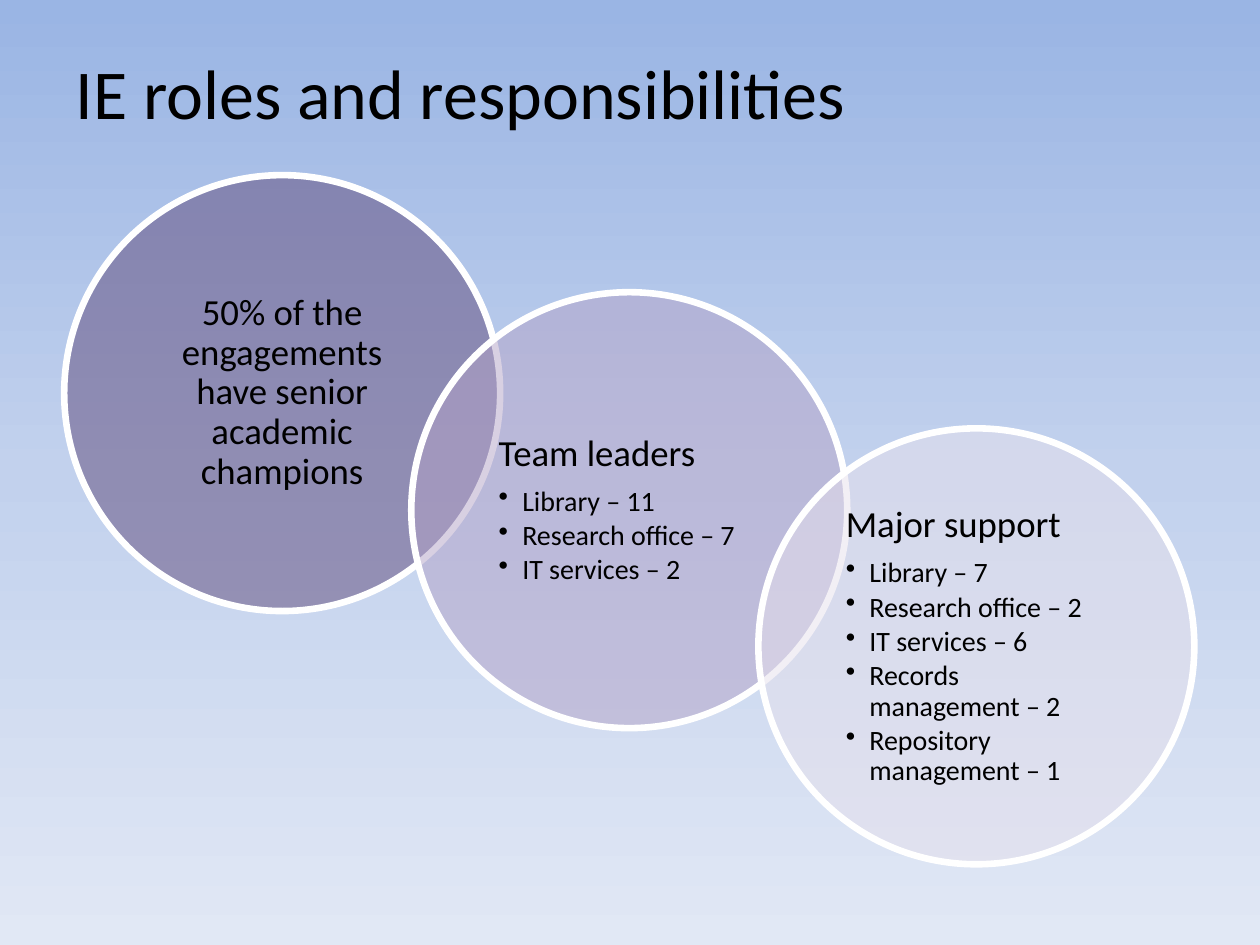
import copy
from dataclasses import dataclass

import pptx
import pptx.dml.color
import pptx.enum.shapes
import pptx.enum.text
import pptx.oxml
import pptx.oxml.ns
import pptx.util

Pt = pptx.util.Pt
RGBColor = pptx.dml.color.RGBColor
PP_ALIGN = pptx.enum.text.PP_ALIGN
MIDDLE = pptx.enum.text.MSO_ANCHOR.MIDDLE
qn = pptx.oxml.ns.qn

BLACK = RGBColor(0x00, 0x00, 0x00)
WHITE = RGBColor(0xFF, 0xFF, 0xFF)
DEEP_PURPLE = RGBColor(0x60, 0x4A, 0x7B)
PURPLE = RGBColor(0xB3, 0xA2, 0xC7)
PALE_PURPLE = RGBColor(0xE6, 0xE0, 0xEC)
SKY = (
    (0, RGBColor(0x9A, 0xB5, 0xE4)),
    (0.5, RGBColor(0xC2, 0xD1, 0xED)),
    (1, RGBColor(0xE1, 0xE8, 0xF5)),
)

FONT = "Calibri"
DIAMETER = 249.1
FIRST_LEFT = 36.7
STEP = 198.35
BULLET_INDENT = 13.5


@dataclass(frozen=True)
class Role:
    top: float
    color: RGBColor
    heading: str
    teams: tuple[str, ...] = ()


ROLES = (
    Role(100.1, DEEP_PURPLE, "50% of the engagements have senior academic champions"),
    Role(167, PURPLE, "Team leaders",
         ("Library – 11", "Research office – 7", "IT services – 2")),
    Role(244.8, PALE_PURPLE, "Major support",
         ("Library – 7", "Research office – 2", "IT services – 6",
          "Records management – 2", "Repository management – 1")),
)


def paint_background(slide) -> None:
    fill = slide.background.fill
    fill.gradient()
    fill.gradient_angle = 270
    stops = next(slide.element.iter(qn("a:gsLst")))
    stops.insert(1, copy.deepcopy(stops[0]))
    for stop, (position, color) in zip(fill.gradient_stops, SKY):
        stop.position = position
        stop.color.rgb = color


def style_font(paragraph, size: float) -> None:
    paragraph.font.name = FONT
    paragraph.font.size = Pt(size)
    paragraph.font.color.rgb = BLACK


def add_title(slide, text: str) -> None:
    title = slide.shapes.title
    title.left, title.top, title.width, title.height = map(Pt, (36, 21.6, 648, 61.2))
    title.text_frame.text = text
    title.text_frame.vertical_anchor = MIDDLE
    heading = title.text_frame.paragraphs[0]
    heading.alignment = PP_ALIGN.LEFT
    style_font(heading, 40)


def make_translucent(shape, percent: int) -> None:
    color = shape.fill._xPr.find(qn("a:solidFill"))[0]
    alpha = pptx.oxml.parse_xml(
        f'<a:alpha {pptx.oxml.ns.nsdecls("a")} val="{percent * 1000}"/>')
    color.append(alpha)


def add_bullet(paragraph) -> None:
    paragraph.level = 1
    properties = paragraph._p.get_or_add_pPr()
    properties.set("marL", str(Pt(BULLET_INDENT)))
    properties.set("indent", str(-Pt(BULLET_INDENT)))
    properties.append(pptx.oxml.parse_xml(
        f'<a:buChar {pptx.oxml.ns.nsdecls("a")} char="•"/>'))


def add_role(slide, left: float, role: Role) -> None:
    circle = slide.shapes.add_shape(
        pptx.enum.shapes.MSO_SHAPE.OVAL,
        Pt(left), Pt(role.top), Pt(DIAMETER), Pt(DIAMETER))
    circle.shadow.inherit = False
    circle.fill.solid()
    circle.fill.fore_color.rgb = role.color
    make_translucent(circle, 50)
    circle.line.color.rgb = WHITE
    circle.line.width = Pt(3.78)

    # Text fills the square inscribed in the circle
    frame = circle.text_frame
    frame.word_wrap = True
    frame.vertical_anchor = MIDDLE
    frame.margin_left = frame.margin_right = Pt(13.5)
    frame.margin_top = frame.margin_bottom = Pt(2)

    heading = frame.paragraphs[0]
    heading.text = role.heading
    heading.alignment = PP_ALIGN.LEFT if role.teams else PP_ALIGN.CENTER
    heading.line_spacing = 0.9
    heading.space_after = Pt(7.35)
    style_font(heading, 21)

    for team in role.teams:
        item = frame.add_paragraph()
        item.text = team
        item.alignment = PP_ALIGN.LEFT
        item.line_spacing = 0.9
        item.space_after = Pt(2.4)
        style_font(item, 16)
        add_bullet(item)


def main() -> None:
    deck = pptx.Presentation()
    deck.slide_width, deck.slide_height = Pt(720), Pt(540)
    slide = deck.slides.add_slide(deck.slide_layouts.get_by_name("Title Only"))

    paint_background(slide)
    add_title(slide, "IE roles and responsibilities")

    # Overlapping circles, evenly spaced from left to right
    for index, role in enumerate(ROLES):
        add_role(slide, FIRST_LEFT + index * STEP, role)

    deck.save("out.pptx")


if __name__ == "__main__":
    main()
